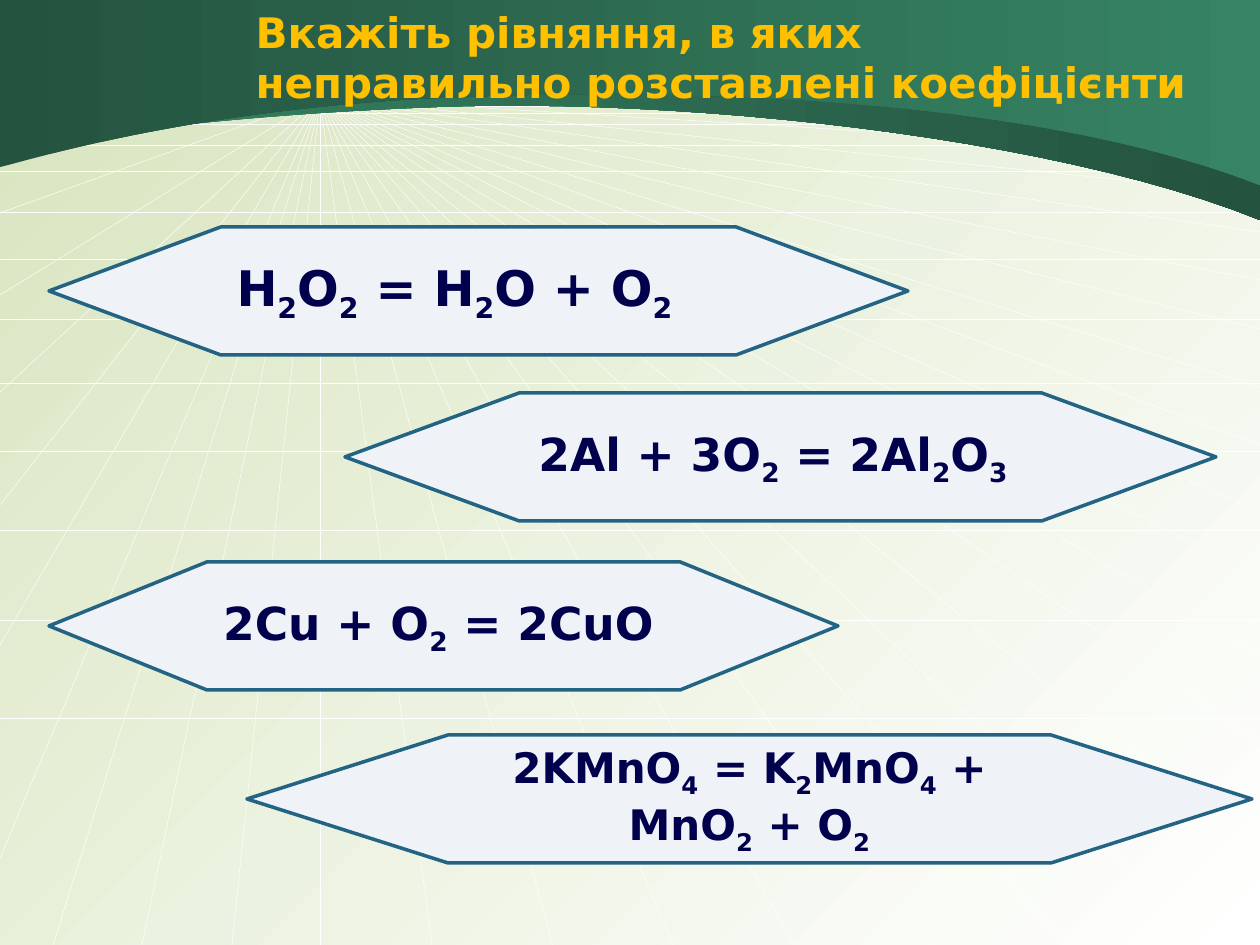
from dataclasses import dataclass
from lxml import etree
from pptx import Presentation
from pptx import util as u
from pptx.dml.color import RGBColor
from pptx.enum import shapes as sh, text as tx
from pptx.oxml.ns import qn

PX = 914400 / 126  # EMU in one px
WIDE, HIGH = 1260, 945


@dataclass(frozen=True)
class Theme:
    font: str = "DejaVu Sans"
    title: str = "FFC000"
    ink: str = "00004D"
    card: str = "EFF3F7"
    edge: str = "236383"
    ray: str = "FFFFFF"
    back: tuple = ("D7E4BE", "FFFFFF")
    deep: str = "24533F"
    green: str = "368463"
    head: int = 24
    border: float = 2
    thin: float = 0.25


THEME = Theme()


def px(num):
    return u.Emu(round(num * PX))


def rgb(code):
    return RGBColor.from_string(code)


def style(font, size, color):
    font.name, font.size, font.bold = THEME.font, u.Pt(size), True
    font.color.rgb = rgb(color)


def blend(fill, colors, angle):
    fill.gradient()
    fill.gradient_angle = angle
    for stop, code in zip(fill.gradient_stops, colors):
        stop.color.rgb = rgb(code)


# Thin rays from one point, and level lines
def draw_rays(slide, box):
    left, top, wide, high = box
    right, low = left + wide, top + high
    hub = left + 320, top + 98
    east = (126, 155, 194, 232, 280, 329, 387, 445, 512, 578, 655, 742, 857)
    south = (53, 142, 232, 320, 432, 553, 673, 794, 930, 1066, 1210)
    west = (98, 122, 146, 213, 295, 392, 505, 645, 858)
    level = (106, 113, 124, 145, 171, 212, 259, 319, 383, 451, 530, 620, 718)
    ends = [(right, top + y) for y in east]
    ends += [(left + x, low) for x in south]
    ends += [(left, top + y) for y in west]
    lines = [(hub, end) for end in ends]
    lines += [((left, top + y), (right, top + y)) for y in level]
    group = slide.shapes.add_group_shape()
    for start, end in lines:
        ray = group.shapes.add_connector(
            sh.MSO_CONNECTOR.STRAIGHT, *map(px, start + end))
        ray.line.color.rgb = rgb(THEME.ray)
        ray.line.width = u.Pt(THEME.thin)
        etree.SubElement(ray.element.spPr, qn("a:effectLst"))


def curve(start, one, two, end, steps=24):
    """Points along a cubic curve, after its start."""
    for step in range(1, steps + 1):
        t = step / steps
        s = 1 - t
        yield tuple(s**3 * a + 3 * s * s * t * b + 3 * s * t * t * c + t**3 * d
                    for a, b, c, d in zip(start, one, two, end))


# One green band whose lower edge is two joined curves
def draw_band(slide, box, edge, colors):
    left, top, wide, _ = box
    points = [edge[0], *curve(*edge[:4]), *curve(*edge[3:]), (wide, 0)]
    pen = slide.shapes.build_freeform(px(left), px(top), scale=1.0)
    pen.add_line_segments([(px(left + x), px(top + y)) for x, y in points])
    band = pen.convert_to_shape()
    band.shadow.inherit = False
    band.line.fill.background()
    blend(band.fill, colors, 0)


# Title over the bands
def draw_title(slide, box, lines):
    title = slide.shapes.title
    title.left, title.top, title.width, title.height = map(px, box)
    frame = title.text_frame
    frame.text = "\n".join(lines)
    frame.word_wrap = True
    frame.auto_size = tx.MSO_AUTO_SIZE.NONE
    frame.vertical_anchor = tx.MSO_ANCHOR.TOP
    for para in frame.paragraphs:
        para.alignment = tx.PP_ALIGN.LEFT
        style(para.runs[0].font, THEME.head, THEME.title)
    title.element.getparent().append(title.element)  # to the front


# Hexagon with an equation; every second part of it is an index
def draw_card(slide, box, parts, size, inset):
    card = slide.shapes.add_shape(
        sh.MSO_SHAPE.FLOWCHART_PREPARATION, *map(px, box))
    card.shadow.inherit = False
    card.fill.solid()
    card.fill.fore_color.rgb = rgb(THEME.card)
    card.line.color.rgb = rgb(THEME.edge)
    card.line.width = u.Pt(THEME.border)
    frame = card.text_frame
    frame.word_wrap = True
    frame.vertical_anchor = tx.MSO_ANCHOR.MIDDLE
    frame.margin_left, frame.margin_right = 0, px(inset)
    para = frame.paragraphs[0]
    para.alignment = tx.PP_ALIGN.CENTER
    for num, part in enumerate(parts.split("|")):
        if not part:
            continue
        run = para.add_run()
        run.text = part
        style(run.font, size, THEME.ink)
        if num % 2:
            run.font._element.set("baseline", "-25000")


def main():
    deck = Presentation()
    deck.slide_width, deck.slide_height = px(WIDE), px(HIGH)
    slide = deck.slides.add_slide(deck.slide_layouts[5])
    blend(slide.background.fill, THEME.back, 315)
    draw_rays(slide, (0, 0, WIDE, HIGH))

    # Bands, the lower one behind
    low = [(0, 150), (14, 149), (168, 117), (437, 107),
           (674, 98), (1047, 134), (1260, 220)]
    high = [(0, 167), (14, 165), (190, 107), (459, 97),
            (727, 87), (1047, 102), (1260, 185)]
    draw_band(slide, (0, 0, WIDE, 220), low, (THEME.green, THEME.deep))
    draw_band(slide, (0, 0, WIDE, 185), high, (THEME.deep, THEME.green))

    # Equations: left, top, width, parts, size, right inset
    cards = [
        (49, 227, 859, "H|2|O|2| = H|2|O + O|2", 28, 48),
        (345, 393, 871, "2Al + 3O|2| = 2Al|2|O|3", 26, 15),
        (49, 562, 789, "2Cu + O|2| = 2CuO", 26, 10),
        (247, 735, 1005, "2KMnO|4| = K|2|MnO|4| + MnO|2| + O|2", 24, 0),
    ]
    for left, top, wide, parts, size, inset in cards:
        draw_card(slide, (left, top, wide, 128), parts, size, inset)

    draw_title(slide, (243, 0, 1013, 115),
               ["Вкажіть рівняння, в яких",
                "неправильно розставлені коефіцієнти"])
    deck.save("out.pptx")


if __name__ == "__main__":
    main()
